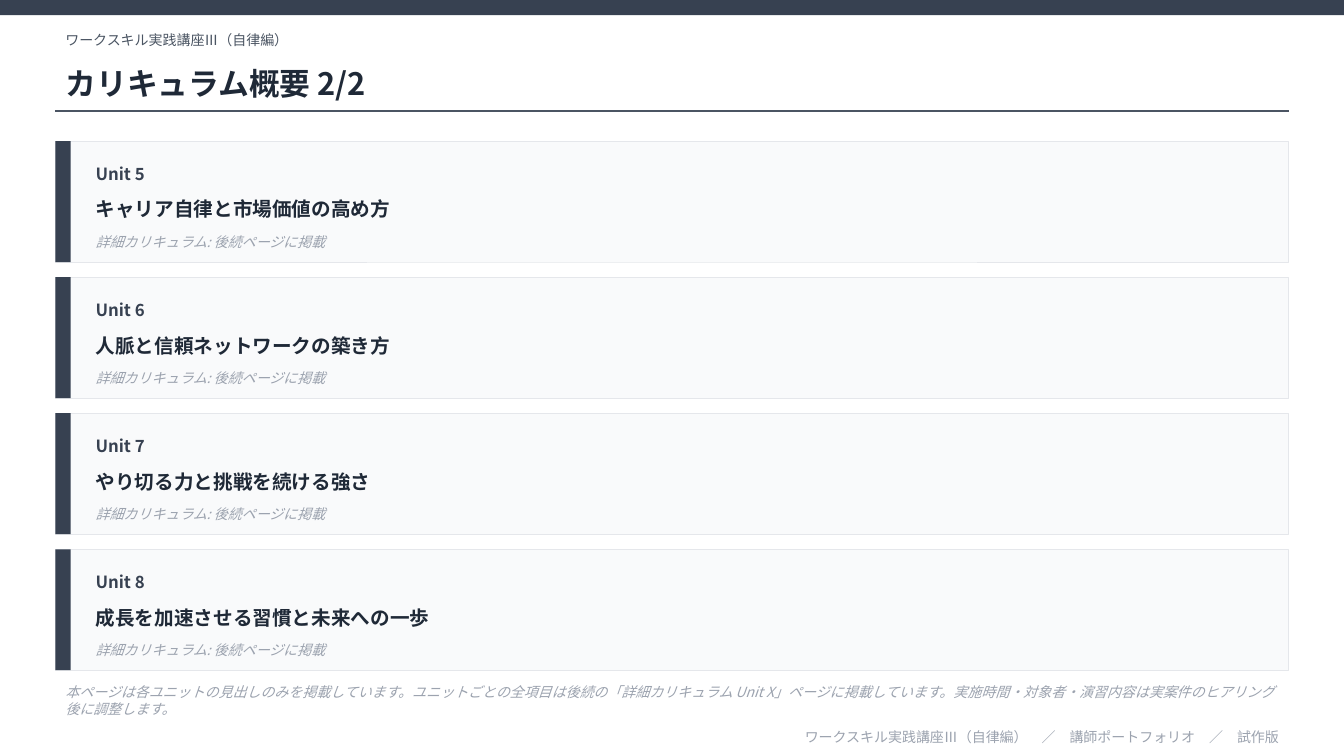
from dataclasses import dataclass

from pptx import Presentation
from pptx.dml.color import RGBColor
from pptx.enum.shapes import MSO_CONNECTOR, MSO_SHAPE
from pptx.enum.text import MSO_ANCHOR, MSO_AUTO_SIZE, PP_ALIGN
from pptx.oxml.ns import qn
from pptx.shapes.autoshape import Shape
from pptx.slide import Slide
from pptx.util import Inches, Length, Pt

FONT = "Noto Sans CJK JP"
WHITE = RGBColor(0xFF, 0xFF, 0xFF)
SLATE = RGBColor(0x37, 0x41, 0x51)
INK = RGBColor(0x1F, 0x29, 0x37)
GREY = RGBColor(0x4B, 0x55, 0x63)
MUTED = RGBColor(0x9C, 0xA3, 0xAF)
CARD_FILL = RGBColor(0xF9, 0xFA, 0xFB)
CARD_EDGE = RGBColor(0xE5, 0xE7, 0xEB)

# Grid: square cells of 0.05 inch
CELL = 0.05
SLIDE_COLS, SLIDE_ROWS = 266.6, 150
MARGIN = 11
CONTENT_COLS = SLIDE_COLS - 2 * MARGIN
BAR = 3
RULE_ROW = 22
FIRST_CARD_ROW, CARD_ROWS, CARD_STEP = 28, 24, 27
CARD_TEXT_INDENT = 6
CARD_TEXT_COLS = CONTENT_COLS - 10


@dataclass(frozen=True)
class Area:
    col: float
    row: float
    cols: float
    rows: float


@dataclass(frozen=True)
class Style:
    size: float
    color: RGBColor
    bold: bool = False
    italic: bool = False
    align: PP_ALIGN = PP_ALIGN.LEFT


@dataclass(frozen=True)
class CardLine:
    row: float
    cols: float
    rows: float
    style: Style


@dataclass(frozen=True)
class Unit:
    number: int
    heading: str


COURSE = "ワークスキル実践講座Ⅲ（自律編）"
DETAIL = "詳細カリキュラム: 後続ページに掲載"
UNITS = [
    Unit(5, "キャリア自律と市場価値の高め方"),
    Unit(6, "人脈と信頼ネットワークの築き方"),
    Unit(7, "やり切る力と挑戦を続ける強さ"),
    Unit(8, "成長を加速させる習慣と未来への一歩"),
]
NOTE = Style(10, MUTED, italic=True)
CARD_LINES = [
    CardLine(2.4, 30, 8, Style(12, SLATE, bold=True)),
    CardLine(9, CARD_TEXT_COLS, 9, Style(14, INK, bold=True)),
    CardLine(17, CARD_TEXT_COLS, 6, NOTE),
]


def cells(count: float) -> Length:
    return Inches(round(count * CELL, 2))


def box(area: Area) -> tuple[Length, Length, Length, Length]:
    return cells(area.col), cells(area.row), cells(area.cols), cells(area.rows)


def write(holder: Shape, text: str, style: Style) -> None:
    frame = holder.text_frame
    frame.text = text
    frame.word_wrap = True
    frame.auto_size = MSO_AUTO_SIZE.NONE
    frame.vertical_anchor = MSO_ANCHOR.MIDDLE
    paragraph = frame.paragraphs[0]
    paragraph.alignment = style.align
    for run in paragraph.runs:
        font = run.font
        font.name = FONT
        font.size = Pt(style.size)
        font.bold = style.bold
        font.italic = style.italic
        font.color.rgb = style.color
        # East Asian typeface follows the Latin one
        east_asian = font._element.makeelement(qn("a:ea"), {"typeface": FONT})
        font._element.find(qn("a:latin")).addnext(east_asian)


def add_text(slide: Slide, area: Area, text: str, style: Style) -> None:
    write(slide.shapes.add_textbox(*box(area)), text, style)


def add_block(slide: Slide, area: Area, fill: RGBColor,
              edge: RGBColor | None = None) -> None:
    block = slide.shapes.add_shape(MSO_SHAPE.RECTANGLE, *box(area))
    block.shadow.inherit = False
    block.fill.solid()
    block.fill.fore_color.rgb = fill
    if edge is None:
        block.line.fill.background()
    else:
        block.line.color.rgb = edge
        block.line.width = Pt(0.5)


def add_rule(slide: Slide, row: float) -> None:
    rule = slide.shapes.add_connector(
        MSO_CONNECTOR.STRAIGHT, cells(MARGIN), cells(row),
        cells(MARGIN + CONTENT_COLS), cells(row))
    rule.line.color.rgb = GREY
    rule.line.width = Pt(1)
    properties = rule._element.spPr
    properties.append(properties.makeelement(qn("a:effectLst"), {}))


def add_card(slide: Slide, row: float, unit: Unit) -> None:
    add_block(slide, Area(MARGIN, row, CONTENT_COLS, CARD_ROWS), CARD_FILL, CARD_EDGE)
    add_block(slide, Area(MARGIN, row, BAR, CARD_ROWS), SLATE)
    texts = (f"Unit {unit.number}", unit.heading, DETAIL)
    for line, text in zip(CARD_LINES, texts):
        area = Area(MARGIN + CARD_TEXT_INDENT, row + line.row, line.cols, line.rows)
        add_text(slide, area, text, line.style)


def main() -> None:
    deck = Presentation()
    deck.slide_width, deck.slide_height = cells(SLIDE_COLS), cells(SLIDE_ROWS)
    slide = deck.slides.add_slide(deck.slide_layouts[5])
    slide.background.fill.solid()
    slide.background.fill.fore_color.rgb = WHITE

    # Header
    add_block(slide, Area(0, 0, SLIDE_COLS, BAR), SLATE)
    add_text(slide, Area(MARGIN, 5, CONTENT_COLS, 6), COURSE, Style(10, GREY))
    title = slide.shapes.title
    title.left, title.top, title.width, title.height = box(
        Area(MARGIN, 11, CONTENT_COLS, 11))
    write(title, "カリキュラム概要 2/2", Style(22, INK, bold=True))
    add_rule(slide, RULE_ROW)

    # Unit cards
    for index, unit in enumerate(UNITS):
        add_card(slide, FIRST_CARD_ROW + index * CARD_STEP, unit)

    # Note and footer
    add_text(
        slide, Area(MARGIN, 135, CONTENT_COLS, 8),
        "本ページは各ユニットの見出しのみを掲載しています。"
        "ユニットごとの全項目は後続の「詳細カリキュラム Unit X」ページに掲載しています。"
        "実施時間・対象者・演習内容は実案件のヒアリング後に調整します。", NOTE)
    add_text(slide, Area(MARGIN, 144, CONTENT_COLS, 4.4),
             f"{COURSE}　／　講師ポートフォリオ　／　試作版",
             Style(10, MUTED, align=PP_ALIGN.RIGHT))

    deck.save("out.pptx")


if __name__ == "__main__":
    main()
